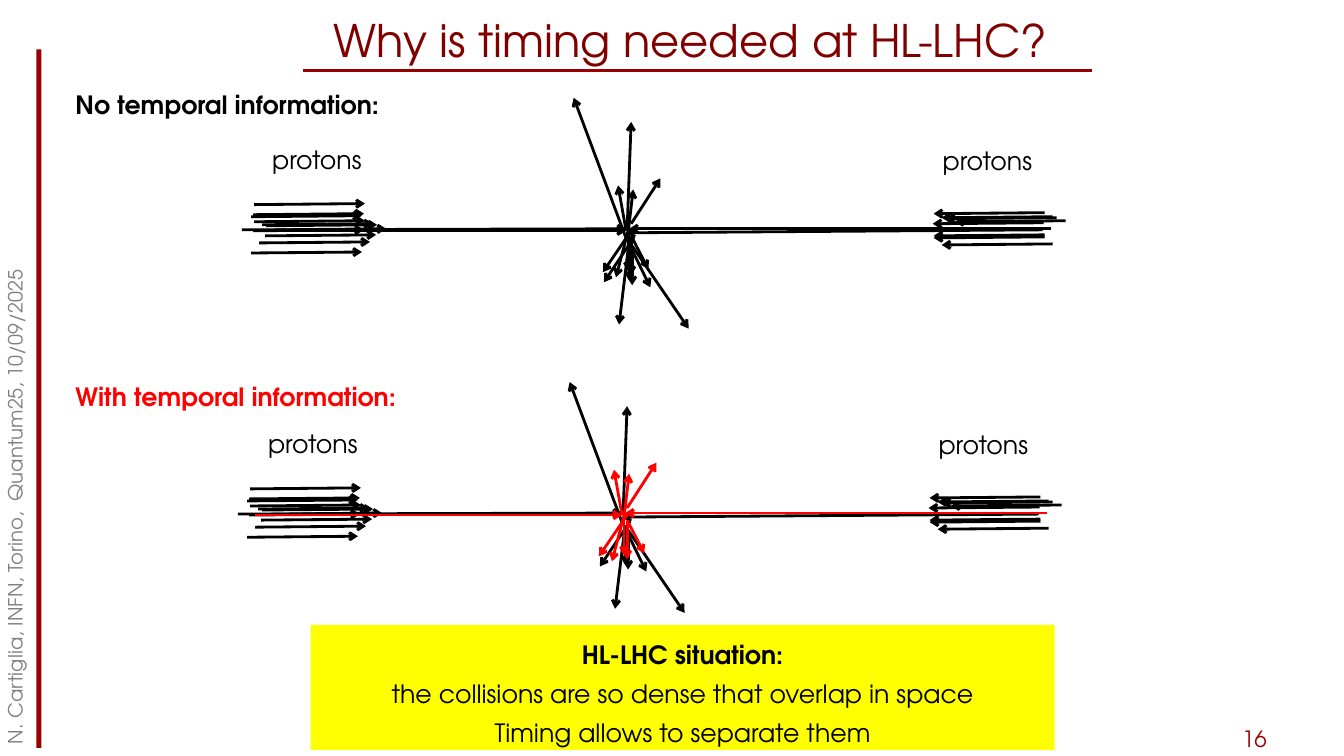
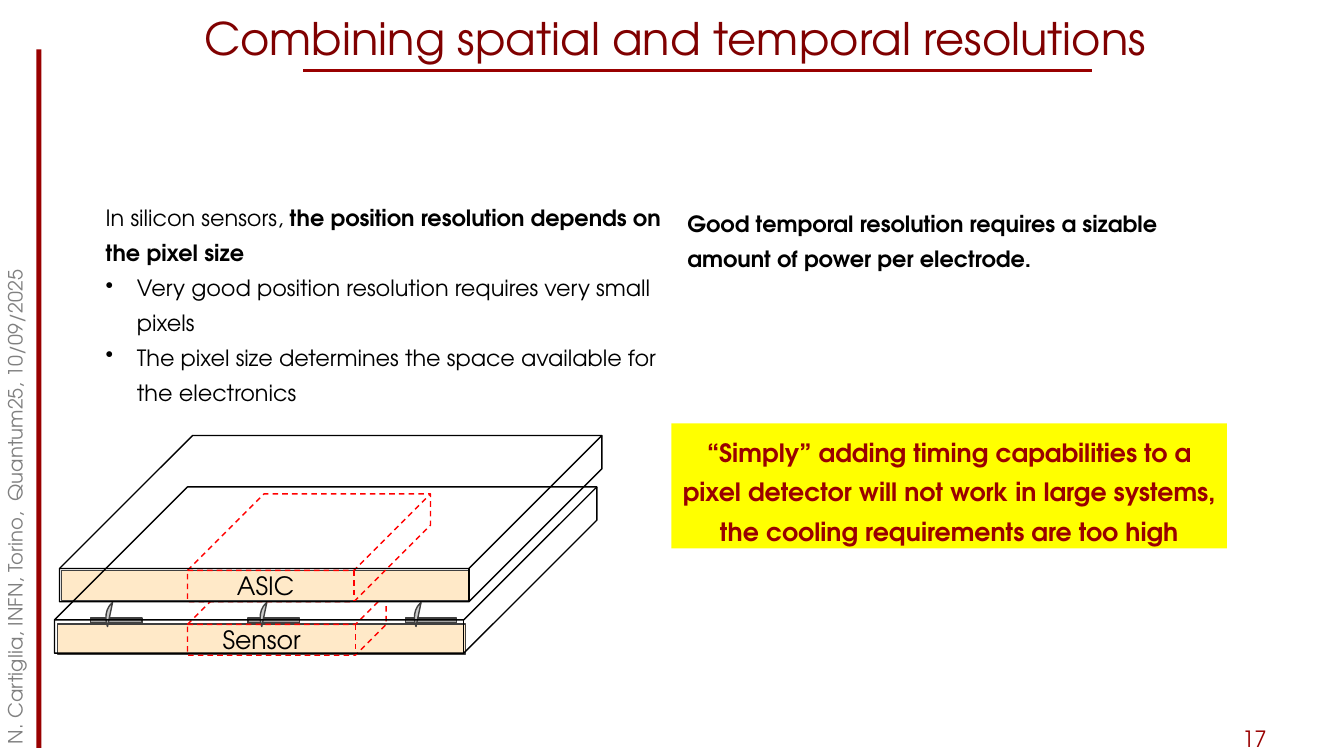
from dataclasses import dataclass
from typing import NamedTuple, Optional

import lxml.etree
import pptx
import pptx.dml.color
import pptx.enum.dml
import pptx.enum.shapes
import pptx.enum.text
import pptx.oxml.ns
import pptx.util

Inches = pptx.util.Inches
Pt = pptx.util.Pt
qn = pptx.oxml.ns.qn
SHAPE = pptx.enum.shapes.MSO_SHAPE
ALIGN = pptx.enum.text.PP_ALIGN
ANCHOR = pptx.enum.text.MSO_ANCHOR


@dataclass(frozen=True)
class Theme:
    font: str = "TeX Gyre Adventor"
    title_color: str = "800000"
    accent: str = "990000"
    grey: str = "808080"
    black: str = "000000"
    red: str = "FF0000"
    highlight: str = "FFFF00"
    outline: str = "404040"
    layer: str = "FFE9C8"
    pad: str = "A4A4A4"
    bump: str = "CCCCCC"
    title_size: int = 32
    label_size: int = 18
    body_size: int = 16
    footer_size: int = 14
    spacing: float = 1.3


T = Theme()


class Box(NamedTuple):
    left: float
    top: float
    width: float
    height: float


class Run(NamedTuple):
    text: str
    bold: bool = False


class Para(NamedTuple):
    runs: list[Run]
    bullet: bool = False


class Arrow(NamedTuple):
    x1: float
    y1: float
    x2: float
    y2: float


class Cube(NamedTuple):
    box: Box
    depth: float
    color: str
    dashed: bool = False


@dataclass(frozen=True)
class Style:
    size: int = T.label_size
    color: str = T.black
    align: ALIGN = ALIGN.LEFT
    anchor: ANCHOR = ANCHOR.TOP
    spacing: float = 1.0
    wrap: bool = True


def rgb(value: str):
    return pptx.dml.color.RGBColor.from_string(value)


def lengths(values):
    return [Inches(v) for v in values]


def plain(text: str, bold: bool = False) -> list[Para]:
    return [Para([Run(text, bold)])]


def add_bullet(p) -> None:
    pPr = p._p.get_or_add_pPr()
    for name, value in {"marL": 0.31, "indent": -0.31}.items():
        pPr.set(name, str(int(Inches(value))))
    lxml.etree.SubElement(pPr, qn("a:buChar")).set("char", "•")


def fill_text(sp, paras: list[Para], style: Style) -> None:
    tf = sp.text_frame
    for name, value in {"word_wrap": style.wrap,
                        "vertical_anchor": style.anchor}.items():
        setattr(tf, name, value)
    for i, para in enumerate(paras):
        p = tf.add_paragraph() if i else tf.paragraphs[0]
        if para.bullet:
            add_bullet(p)
        for name, value in {"alignment": style.align,
                            "line_spacing": style.spacing}.items():
            setattr(p, name, value)
        for run in para.runs:
            r = p.add_run()
            r.text = run.text
            font = {"name": T.font, "size": Pt(style.size), "bold": run.bold}
            for name, value in font.items():
                setattr(r.font, name, value)
            r.font.color.rgb = rgb(style.color)


def add_text(s, box: Box, paras: list[Para], style: Style):
    sp = s.shapes.add_textbox(*lengths(box))
    fill_text(sp, paras, style)
    return sp


def add_shape(s, kind, box: Box, fill: Optional[str] = None,
              line: Optional[str] = None):
    sp = s.shapes.add_shape(kind, *lengths(box))
    sp.shadow.inherit = False
    if fill:
        sp.fill.solid()
        sp.fill.fore_color.rgb = rgb(fill)
    else:
        sp.fill.background()
    if line:
        sp.line.color.rgb = rgb(line)
        sp.line.width = Pt(1)
    else:
        sp.line.fill.background()
    return sp


def add_line(s, ends: Arrow, color: str, arrow: bool = True) -> None:
    sp = s.shapes.add_connector(pptx.enum.shapes.MSO_CONNECTOR.STRAIGHT,
                                *lengths(ends))
    sp.line.color.rgb = rgb(color)
    sp.line.width = Pt(2)
    spPr = sp._element.spPr
    if arrow:
        tail = lxml.etree.SubElement(spPr.find(qn("a:ln")), qn("a:tailEnd"))
        tail.set("type", "arrow")
    lxml.etree.SubElement(spPr, qn("a:effectLst"))


def add_slide(prs, title: str, title_box: Box, number: int):
    """Add a blank slide with the side band, rule, footer and title."""
    s = prs.slides.add_slide(prs.slide_layouts[6])
    add_shape(s, SHAPE.RECTANGLE, Box(0.36, 0.49, 0.05, 6.93), T.accent)
    add_line(s, Arrow(3.01, 0.7, 10.83, 0.7), T.accent, arrow=False)
    add_text(s, Box(12.22, 7.15, 0.81, 0.35), plain(str(number)),
             Style(T.body_size, T.accent, anchor=ANCHOR.MIDDLE))
    author = add_text(s, Box(-3.39, 3.73, 7.12, 0.38),
                      plain("N. Cartiglia, INFN, Torino,  Quantum25, 10/09/2025"),
                      Style(T.footer_size, T.grey))
    author.rotation = 270
    add_text(s, title_box, plain(title),
             Style(T.title_size, T.title_color, ALIGN.CENTER, ANCHOR.MIDDLE))
    return s


def add_callout(s, box: Box, paras: list[Para], color: str) -> None:
    sp = add_shape(s, SHAPE.RECTANGLE, box, T.highlight)
    fill_text(sp, paras, Style(color=color, align=ALIGN.CENTER,
                               spacing=T.spacing))


PROTON_RUN, PROTON_RISE = 1.1, 0.01
LEFT_BUNCH = [(2.52, 2.03), (2.57, 2.41), (2.51, 2.13), (2.52, 2.2),
              (2.6, 2.23), (2.51, 2.29), (2.49, 2.51), (2.49, 2.15),
              (2.64, 2.24), (2.73, 2.28), (2.63, 2.34)]
RIGHT_BUNCH = [(10.36, 2.33), (10.44, 2.42), (10.36, 2.35), (10.36, 2.11),
               (10.44, 2.15), (10.35, 2.21), (10.48, 2.16), (10.57, 2.19)]
FIRST_EVENT = [
    Arrow(2.4, 2.28, 6.21, 2.27), Arrow(10.34, 2.28, 6.21, 2.31),
    Arrow(6.27, 2.44, 6.83, 3.26), Arrow(6.23, 2.4, 6.45, 2.85),
    Arrow(6.27, 2.44, 6.27, 2.83), Arrow(6.22, 2.39, 5.69, 0.97),
    Arrow(6.22, 2.28, 6.26, 1.21), Arrow(6.24, 2.39, 6.14, 3.22),
    Arrow(6.29, 2.35, 5.99, 2.8), Arrow(6.24, 2.39, 6.24, 2.78)]
SECOND_EVENT = [
    Arrow(10.42, 2.27, 6.24, 2.27), Arrow(2.57, 2.29, 6.21, 2.29),
    Arrow(6.26, 2.34, 6.43, 2.67), Arrow(6.23, 2.31, 6.28, 1.88),
    Arrow(6.26, 2.35, 6.26, 2.73), Arrow(6.21, 2.29, 6.13, 1.84),
    Arrow(6.26, 2.22, 6.55, 1.77), Arrow(6.23, 2.29, 6.11, 2.75),
    Arrow(6.28, 2.26, 5.98, 2.7), Arrow(6.23, 2.3, 6.23, 2.69)]


def add_collision(s, heading: str, heading_top: float, heading_color: str,
                  event_color: str, dx: float = 0, dy: float = 0) -> None:
    """Draw two proton bunches and two overlapping events, shifted by dx, dy."""
    bunches = [Arrow(x, y, x + PROTON_RUN, y - PROTON_RISE)
               for x, y in LEFT_BUNCH]
    bunches += [Arrow(x, y, x - PROTON_RUN, y + PROTON_RISE)
                for x, y in RIGHT_BUNCH]
    for arrows, color in ((bunches + FIRST_EVENT, T.black),
                          (SECOND_EVENT, event_color)):
        for a in arrows:
            add_line(s, Arrow(a.x1 + dx, a.y1 + dy, a.x2 + dx, a.y2 + dy), color)
    for left, top in ((2.6, 1.29), (9.25, 1.3)):
        add_text(s, Box(left + dx, top + dy, 1.11, 0.45), plain("protons"),
                 Style(spacing=T.spacing, wrap=False))
    add_text(s, Box(0.65, heading_top, 6.69, 0.4), plain(heading, True),
             Style(color=heading_color))


def add_layer(s, label: str, box: Box) -> None:
    sp = add_shape(s, SHAPE.RECTANGLE, box, T.layer, T.outline)
    fill_text(sp, plain(label), Style(align=ALIGN.CENTER, anchor=ANCHOR.MIDDLE))


def add_cube(s, cube: Cube) -> None:
    sp = add_shape(s, SHAPE.CUBE, cube.box, line=cube.color)
    sp.adjustments[0] = cube.depth
    if cube.dashed:
        sp.line.dash_style = pptx.enum.dml.MSO_LINE.DASH


def add_detector(s) -> None:
    """Draw the sensor bump-bonded to the ASIC, with one pixel outlined."""
    add_layer(s, "Sensor", Box(0.57, 6.19, 4.05, 0.3))
    for i in range(3):
        add_shape(s, SHAPE.RECTANGLE, Box(0.9 + 1.56 * i, 6.13, 0.51, 0.05),
                  T.pad, T.outline)
    for i in range(3):
        bump = add_shape(s, SHAPE.CHORD, Box(1 + 1.53 * i, 6.01, 0.35, 0.25),
                         T.bump, T.outline)
        bump.rotation = 87.3
        for j, degrees in enumerate((56.1, 162)):
            bump.adjustments[j] = degrees * 0.6
    add_cube(s, Cube(Box(1.86, 5.89, 1.97, 0.61), 0.5, T.red, True))
    add_layer(s, "ASIC", Box(0.61, 5.66, 4.05, 0.3))
    for cube in (Cube(Box(1.86, 4.9, 2.41, 1.07), 0.71, T.red, True),
                 Cube(Box(0.59, 4.32, 5.38, 1.65), 0.8, T.black),
                 Cube(Box(0.54, 4.83, 5.38, 1.65), 0.8, T.black)):
        add_cube(s, cube)


def build_timing(prs) -> None:
    s = add_slide(prs, "Why is timing needed at HL-LHC?",
                  Box(0.36, 0.04, 12.98, 0.7), 16)
    add_collision(s, "No temporal information:", 0.84, T.black, T.black)
    add_collision(s, "With temporal information:", 3.73, T.red, T.red,
                  dx=-0.04, dy=2.82)
    add_callout(s, Box(3.08, 6.2, 7.38, 1.24), [
        Para([Run("HL-LHC situation:", True)]),
        Para([Run("the collisions are so dense that overlap in space")]),
        Para([Run("Timing allows to separate them")])], T.black)


def build_resolutions(prs) -> None:
    s = add_slide(prs, "Combining spatial and temporal resolutions",
                  Box(0.36, 0.02, 12.68, 0.7), 17)
    body = Style(T.body_size, spacing=T.spacing)
    add_text(s, Box(0.95, 1.9, 5.71, 2.2), [
        Para([Run("In silicon sensors, "),
              Run("the position resolution depends on the pixel size", True)]),
        Para([Run("Very good position resolution requires very small pixels")],
             bullet=True),
        Para([Run("The pixel size determines the space available for "
                  "the electronics")], bullet=True)], body)
    add_detector(s)
    add_text(s, Box(6.72, 1.96, 5.36, 1.11),
             plain("Good temporal resolution requires a sizable amount of "
                   "power per electrode.", True), body)
    add_callout(s, Box(6.66, 4.2, 5.51, 1.24),
                plain("“Simply” adding timing capabilities to a pixel detector "
                      "will not work in large systems, the cooling "
                      "requirements are too high", True), T.accent)


def main() -> None:
    prs = pptx.Presentation()
    prs.slide_width, prs.slide_height = lengths((13.33, 7.5))
    build_timing(prs)
    build_resolutions(prs)
    prs.save("out.pptx")


if __name__ == "__main__":
    main()
